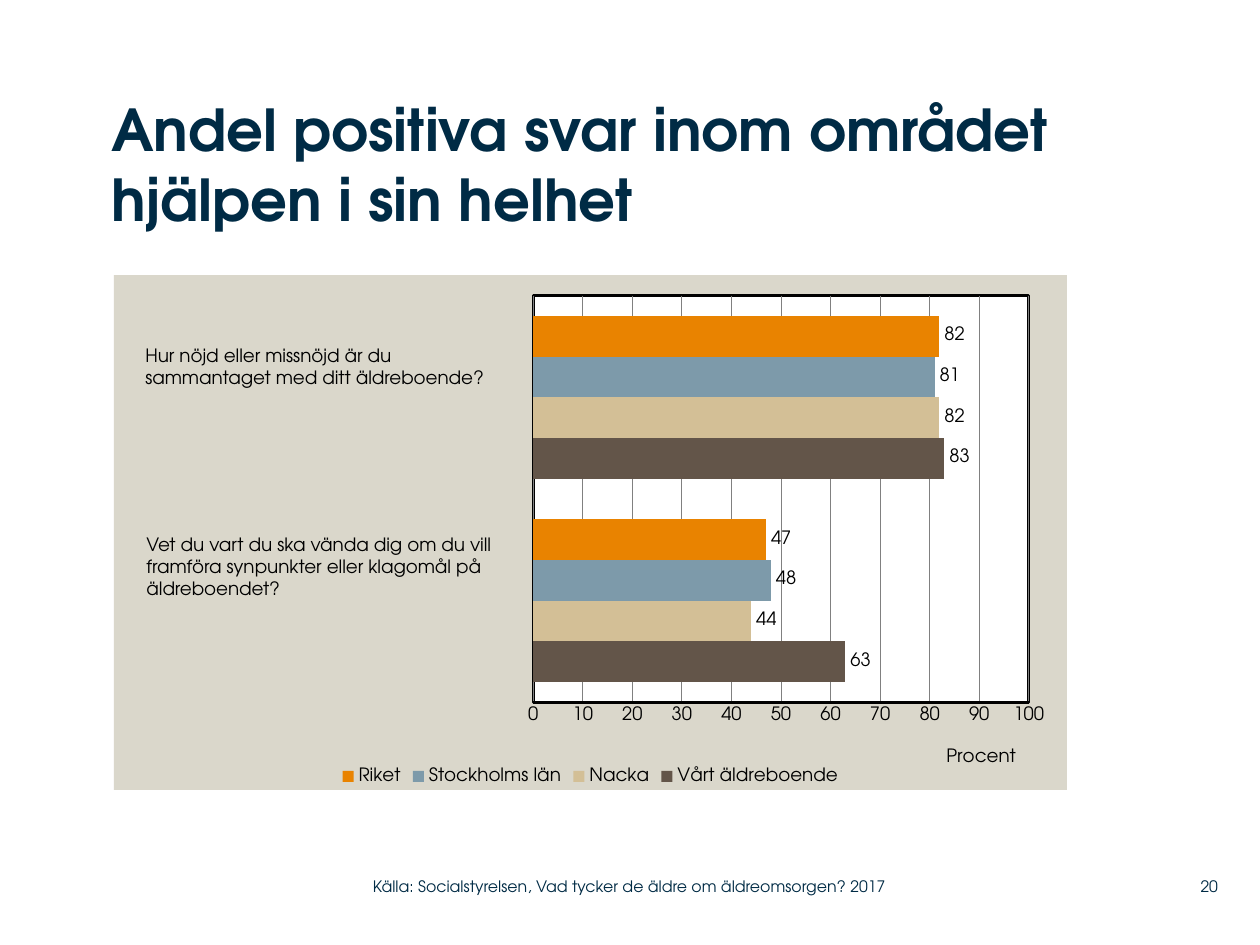
from lxml import etree
from pptx import Presentation
from pptx.chart.data import CategoryChartData
from pptx.dml.color import RGBColor
from pptx.enum.chart import (XL_CHART_TYPE, XL_LABEL_POSITION,
                             XL_LEGEND_POSITION, XL_TICK_MARK)
from pptx.enum.text import MSO_ANCHOR, MSO_AUTO_SIZE, PP_ALIGN
from pptx.oxml import parse_xml
from pptx.oxml.ns import nsdecls, qn
from pptx.util import Pt

BAR = XL_CHART_TYPE.BAR_CLUSTERED
OUTSIDE = XL_LABEL_POSITION.OUTSIDE_END
BOTTOM = XL_LEGEND_POSITION.BOTTOM
NO_TICK = XL_TICK_MARK.NONE
TOP, MIDDLE = MSO_ANCHOR.TOP, MSO_ANCHOR.MIDDLE
NO_FIT = MSO_AUTO_SIZE.NONE
LEFT, RIGHT = PP_ALIGN.LEFT, PP_ALIGN.RIGHT

PX = 914400 / 126
FACE = "TeX Gyre Adventor"
COLORS = {"navy": "002B45", "black": "000000", "white": "FFFFFF",
          "stone": "DAD7CB", "grid": "808080"}
SERIES = [("Vårt äldreboende", (63, 83), "635549"),
          ("Nacka", (44, 82), "D3BF96"),
          ("Stockholms län", (48, 81), "7D9AAA"),
          ("Riket", (47, 82), "E98300")]


def emu(*sizes):
    return [round(size * PX) for size in sizes]


def rgb(name):
    return RGBColor.from_string(COLORS[name])


def style(font, size, color, bold=False):
    font.name = FACE
    font.size = Pt(size)
    font.bold = bold
    font.color.rgb = rgb(color)


def fill_text(frame, lines, size, color, align=LEFT, bold=False):
    frame.word_wrap = True
    frame.auto_size = NO_FIT
    for i, line in enumerate(lines):
        para = frame.add_paragraph() if i else frame.paragraphs[0]
        para.text = line
        para.alignment = align
        style(para.font, size, color, bold)


def trim(frame, anchor):
    """Take away the insets and set the vertical anchor."""
    frame.margin_left = frame.margin_right = 0
    frame.margin_top = frame.margin_bottom = 0
    frame.vertical_anchor = anchor


def add_title(slide, box, text):
    title = slide.shapes.title
    title.left, title.top, title.width, title.height = emu(*box)
    trim(title.text_frame, TOP)
    fill_text(title.text_frame, [text], 33, "navy", bold=True)


def add_label(slide, box, *lines):
    frame = slide.shapes.add_textbox(*emu(*box)).text_frame
    fill_text(frame, lines, 10.5, "black")


def add_footer(slide, box, text, align=LEFT):
    frame = slide.shapes.add_textbox(*emu(*box)).text_frame
    trim(frame, MIDDLE)
    fill_text(frame, [text], 9, "navy", align)


def set_layout(part, inner=False, **places):
    """Place a chart part by fractions of the chart's size."""
    layout = part.find(qn("c:layout"))
    if layout is None:
        layout = etree.Element(qn("c:layout"))
        text = part.find(qn("c:tx"))
        if text is None:
            part.insert(0, layout)
        else:
            text.addnext(layout)
    for old in list(layout):
        layout.remove(old)
    manual = etree.SubElement(layout, qn("c:manualLayout"))
    rules = [("layoutTarget", "inner")] if inner else []
    rules += [("xMode", "edge"), ("yMode", "edge"), *places.items()]
    for tag, value in rules:
        etree.SubElement(manual, qn("c:" + tag), val=str(value))


def area(fill, line=None):
    """Build the fill and outline of a chart area."""
    edge = "<a:ln><a:noFill/></a:ln>"
    if line:
        edge = (f'<a:ln w="{Pt(2)}"><a:solidFill><a:srgbClr val="{COLORS[line]}"/>'
                "</a:solidFill></a:ln>")
    return parse_xml(f'<c:spPr {nsdecls("c", "a")}><a:solidFill>'
                     f'<a:srgbClr val="{COLORS[fill]}"/></a:solidFill>{edge}</c:spPr>')


def format_axes(chart):
    chart.category_axis.visible = False
    axis = chart.value_axis
    axis.minimum_scale, axis.maximum_scale, axis.major_unit = 0, 100, 10
    axis.major_tick_mark = axis.minor_tick_mark = NO_TICK
    style(axis.tick_labels.font, 10.5, "black")
    axis.format.line.color.rgb = rgb("black")
    axis.format.line.width = Pt(2)
    axis.has_major_gridlines = True
    grid = axis.major_gridlines.format.line
    grid.color.rgb = rgb("grid")
    grid.width = Pt(0.5)
    para = axis.axis_title.text_frame.paragraphs[0]
    para.text = "Procent"
    style(para.font, 10.5, "black")
    set_layout(axis.axis_title._element, x=0.87, y=0.91)


def format_bars(plot):
    plot.gap_width = 100
    plot.overlap = 0
    plot.vary_by_categories = False
    for series, (_, _, color) in zip(plot.series, SERIES):
        series.format.fill.solid()
        series.format.fill.fore_color.rgb = RGBColor.from_string(color)
        labels = series.data_labels
        labels.show_value = True
        labels.position = OUTSIDE
        style(labels.font, 10.5, "black")


def add_bars(slide, box):
    data = CategoryChartData()
    data.categories = ["1", "2"]
    for name, values, _ in SERIES:
        data.add_series(name, values)
    chart = slide.shapes.add_chart(BAR, *emu(*box), data).chart
    style(chart.font, 10.5, "black")
    chart.has_title = False
    chart.has_legend = True
    chart.legend.position = BOTTOM
    chart.legend.include_in_layout = False
    style(chart.legend.font, 10.5, "black")
    format_axes(chart)
    format_bars(chart.plots[0])
    root = chart._chartSpace
    root.chart.addnext(area("stone"))
    plot = root.chart.plotArea
    set_layout(plot, inner=True, x=0.44, y=0.04, w=0.52, h=0.79)
    plot.append(area("white", "black"))


def main():
    deck = Presentation()
    deck.slide_width, deck.slide_height = emu(1260, 945)
    slide = deck.slides.add_slide(deck.slide_layouts[5])
    add_bars(slide, (114, 275, 953, 515))
    add_title(slide, (111, 94, 958, 179),
              "Andel positiva svar inom området hjälpen i sin helhet")
    add_label(slide, (133, 338, 376, 57), "Hur nöjd eller missnöjd är du",
              "sammantaget med ditt äldreboende?")
    add_label(slide, (134, 527, 374, 79),
              "Vet du vart du ska vända dig om du vill framföra "
              "synpunkter eller klagomål på äldreboendet?")
    add_footer(slide, (1159, 868, 59, 37), "20", RIGHT)
    add_footer(slide, (373, 868, 558, 37),
               "Källa: Socialstyrelsen, Vad tycker de äldre om äldreomsorgen? 2017")
    deck.save("out.pptx")


if __name__ == "__main__":
    main()
